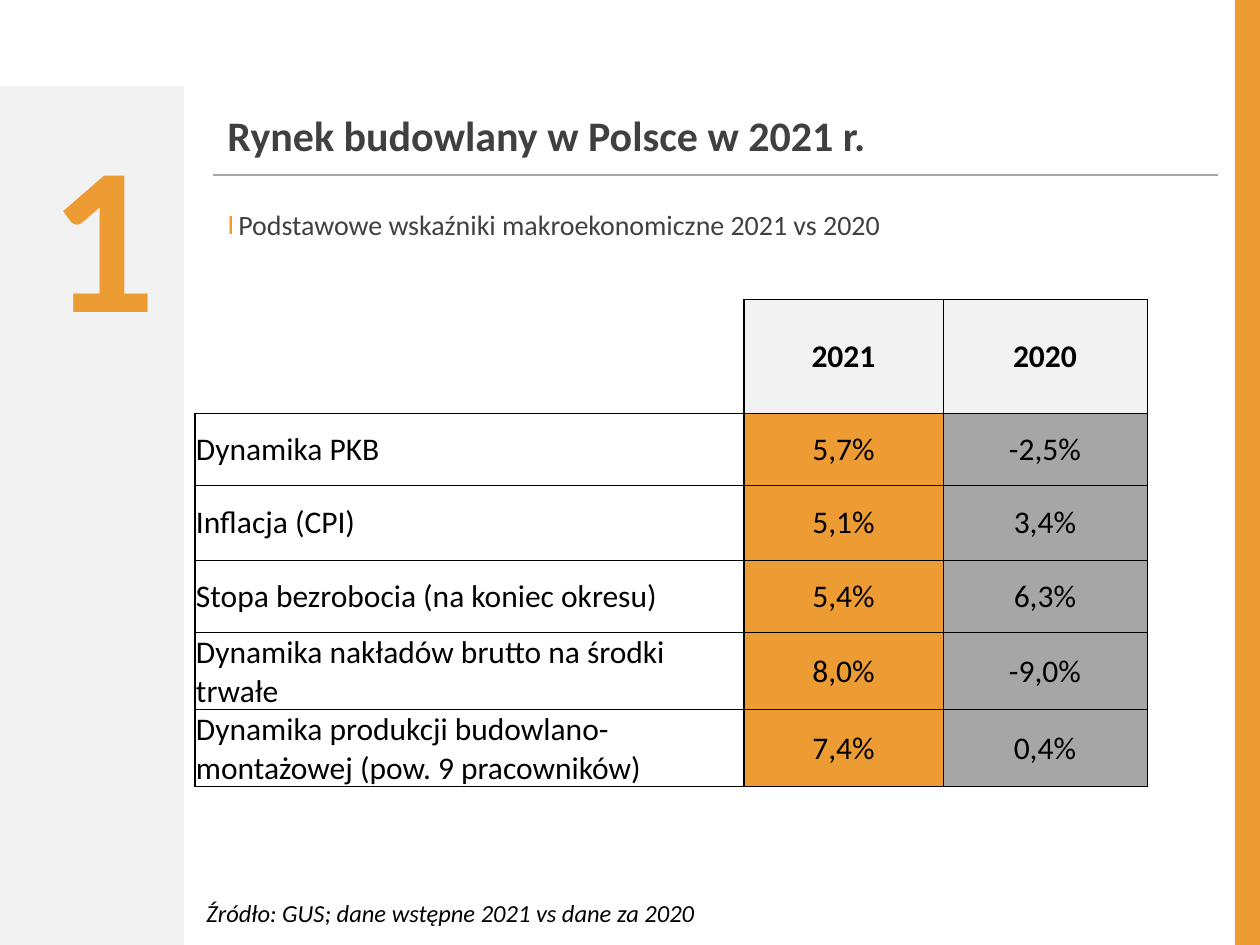
"""Build the slide on key figures of the Polish building market."""
from dataclasses import dataclass

from lxml import etree
from pptx import Presentation
from pptx.dml.color import RGBColor
from pptx.enum.shapes import MSO_CONNECTOR, MSO_SHAPE
from pptx.enum.text import MSO_ANCHOR, PP_ALIGN
from pptx.oxml.ns import qn
from pptx.util import Emu, Pt

PX = 914400 / 126
LEFT, MID, RIGHT = PP_ALIGN.LEFT, PP_ALIGN.CENTER, PP_ALIGN.RIGHT
TOP, CENTER = MSO_ANCHOR.TOP, MSO_ANCHOR.MIDDLE
RECT, LINE = MSO_SHAPE.RECTANGLE, MSO_CONNECTOR.STRAIGHT
FONT = "Calibri"
ORANGE, PALE, GRAY = "ED9B33", "F2F2F2", "A6A6A6"
DARK, BLACK = "404040", "000000"


@dataclass
class Bar:
    """A plain filled band."""
    box: tuple
    fill: str


@dataclass
class Label:
    """A text box with one paragraph."""
    text: str
    box: tuple
    size: int
    color: str
    bold: bool = False
    italic: bool = False
    align: PP_ALIGN = LEFT
    anchor: MSO_ANCHOR = TOP
    bullet: str = ""
    inset: int = 6


BARS = [
    Bar((0, 86, 184, 859), PALE),
    Bar((1235, 0, 25, 945), ORANGE),
]
LABELS = [
    Label("1", (-189, 87, 357, 301), 120, ORANGE, bold=True, align=RIGHT, inset=16),
    Label("Podstawowe wskaźniki makroekonomiczne 2021 vs 2020",
          (215, 202, 1005, 684), 16, DARK, bullet="I"),
    Label("Rynek budowlany w Polsce w 2021 r.",
          (215, 95, 1005, 79), 24, DARK, bold=True, anchor=CENTER),
    Label("Źródło: GUS; dane wstępne 2021 vs dane za 2020",
          (194, 892, 725, 43), 14, BLACK, italic=True),
]
COLS = [549, 199, 204]
ROWS = [114, 72, 75, 73, 77, 77]
DATA = [
    ("", "2021", "2020"),
    ("Dynamika PKB", "5,7%", "-2,5%"),
    ("Inflacja (CPI)", "5,1%", "3,4%"),
    ("Stopa bezrobocia (na koniec okresu)", "5,4%", "6,3%"),
    ("Dynamika nakładów brutto na środki trwałe", "8,0%", "-9,0%"),
    ("Dynamika produkcji budowlano-montażowej (pow. 9 pracowników)",
     "7,4%", "0,4%"),
]


def px(num: int) -> Emu:
    """Turn pixels into EMU."""
    return Emu(round(num * PX))


def rgb(code: str) -> RGBColor:
    """Turn a hex string into a colour."""
    return RGBColor.from_string(code)


def style(para, size: int, color: str, bold=False, italic=False) -> None:
    """Format the runs of a paragraph."""
    for run in para.runs:
        font = run.font
        font.name, font.size = FONT, Pt(size)
        font.bold, font.italic = bold, italic
        font.color.rgb = rgb(color)


def add_bar(slide, bar: Bar) -> None:
    """Draw a filled band."""
    shape = slide.shapes.add_shape(RECT, *map(px, bar.box))
    shape.shadow.inherit = False
    shape.fill.solid()
    shape.fill.fore_color.rgb = rgb(bar.fill)
    shape.line.fill.background()


def add_rule(slide, left: int, right: int, top: int) -> None:
    """Draw the thin rule below the title."""
    rule = slide.shapes.add_connector(LINE, px(left), px(top), px(right), px(top))
    rule.line.color.rgb = rgb(GRAY)
    rule.line.width = Pt(0.75)
    etree.SubElement(rule.element.spPr, qn("a:effectLst"))


def add_mark(para, char: str) -> None:
    """Give a paragraph an orange bullet."""
    props = para._p.get_or_add_pPr()
    props.set("marL", str(px(11)))
    props.set("indent", str(px(-11)))
    tint = etree.SubElement(props, qn("a:buClr"))
    etree.SubElement(tint, qn("a:srgbClr"), val=ORANGE)
    etree.SubElement(props, qn("a:buFont"), typeface=FONT)
    etree.SubElement(props, qn("a:buChar"), char=char)


def add_label(slide, label: Label) -> None:
    """Draw a text box."""
    frame = slide.shapes.add_textbox(*map(px, label.box)).text_frame
    frame.word_wrap = True
    frame.vertical_anchor = label.anchor
    frame.margin_top = px(label.inset)
    frame.text = label.text
    para = frame.paragraphs[0]
    para.alignment = label.align
    if label.bullet:
        add_mark(para, label.bullet)
    style(para, label.size, label.color, label.bold, label.italic)


def add_edge(cell, side: str, width: float) -> None:
    """Draw one cell border, or none when the width is zero."""
    props = cell._tc.get_or_add_tcPr()
    edge = etree.SubElement(props, qn(f"a:ln{side}"), w=str(Pt(width)))
    if width:
        fill = etree.SubElement(edge, qn("a:solidFill"))
        etree.SubElement(fill, qn("a:srgbClr"), val=BLACK)
    else:
        etree.SubElement(edge, qn("a:noFill"))


def fill_cell(cell, text: str, row: int, col: int) -> None:
    """Set the text, borders and fill of one cell."""
    cell.text = text
    cell.vertical_anchor = CENTER
    cell.margin_left = cell.margin_right = cell.margin_top = px(1)
    cell.margin_bottom = 0
    para = cell.text_frame.paragraphs[0]
    para.alignment = MID if col else LEFT
    style(para, 18, BLACK, bold=row == 0)
    blank = row == col == 0
    wide = {"L": 1 if col < 2 else 0.5, "R": 0.5 if col else 1, "T": 0.5, "B": 0.5}
    for side, width in wide.items():
        add_edge(cell, side, 0 if blank and side in "LT" else width)
    if col:
        cell.fill.solid()
        cell.fill.fore_color.rgb = rgb((ORANGE, GRAY)[col - 1] if row else PALE)
    else:
        cell.fill.background()


def add_grid(slide, left: int, top: int) -> None:
    """Draw the table of key figures."""
    box = map(px, (left, top, sum(COLS), sum(ROWS)))
    table = slide.shapes.add_table(len(ROWS), len(COLS), *box).table
    table.first_row = table.horz_banding = False
    for col, width in zip(table.columns, COLS):
        col.width = px(width)
    for row, height in zip(table.rows, ROWS):
        row.height = px(height)
    for row, texts in enumerate(DATA):
        for col, text in enumerate(texts):
            fill_cell(table.cell(row, col), text, row, col)


def main() -> None:
    """Build and save the slide."""
    deck = Presentation()
    deck.slide_width, deck.slide_height = px(1260), px(945)
    slide = deck.slides.add_slide(deck.slide_layouts[6])
    for bar in BARS:
        add_bar(slide, bar)
    add_rule(slide, 213, 1218, 175)
    for label in LABELS:
        add_label(slide, label)
    add_grid(slide, 195, 299)
    deck.save("out.pptx")


if __name__ == "__main__":
    main()
